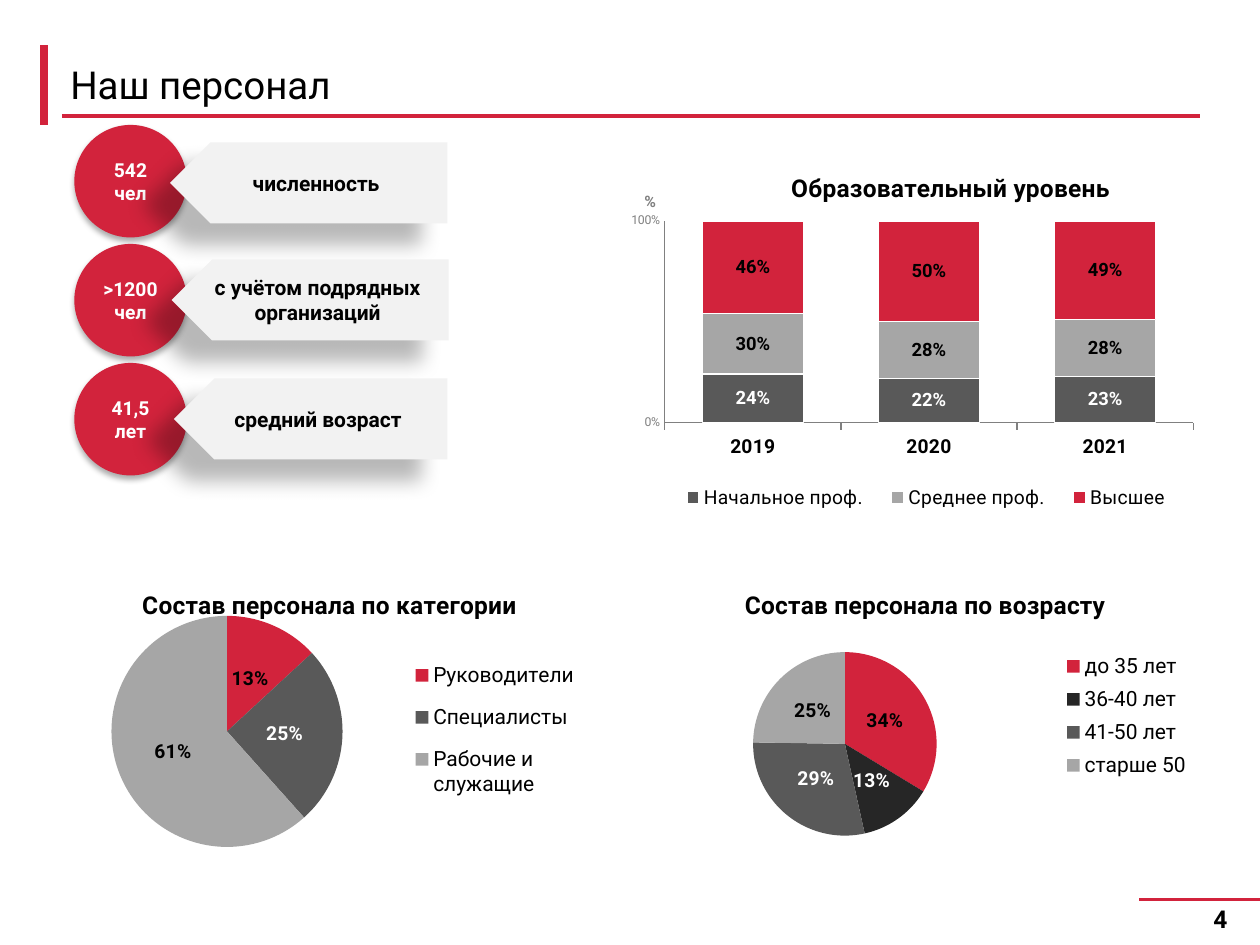
from dataclasses import dataclass

from lxml.etree import SubElement
from pptx import Presentation
from pptx.chart.data import CategoryChartData
from pptx.dml.color import RGBColor
from pptx.enum.chart import XL_CHART_TYPE, XL_LABEL_POSITION, XL_LEGEND_POSITION, XL_TICK_MARK
from pptx.enum.shapes import MSO_CONNECTOR, MSO_SHAPE
from pptx.enum.text import MSO_ANCHOR, PP_ALIGN
from pptx.oxml import parse_xml
from pptx.oxml.ns import nsdecls, qn
from pptx.util import Pt


@dataclass(frozen=True)
class Theme:
    font: str = "Roboto"
    red: str = "D2233C"
    black: str = "000000"
    white: str = "FFFFFF"
    charcoal: str = "262626"
    dark: str = "595959"
    middle: str = "A6A6A6"
    axis: str = "808080"
    pale: str = "F2F2F2"
    heading: float = 22
    chart_title: float = 14
    body: float = 12
    small: float = 11
    bar_label: float = 10.5
    axis_title: float = 9
    tick: float = 7


@dataclass
class SlideBuilder:
    theme: Theme
    slide: object

    def style(self, font, size, color=None, bold=False):
        font.name, font.size, font.bold = self.theme.font, Pt(size), bold
        font.color.rgb = RGBColor.from_string(color or self.theme.black)

    def paint(self, fill, color):
        fill.solid()
        fill.fore_color.rgb = RGBColor.from_string(color)

    def set_text(self, shape, text, size, color=None, bold=False,
                 align=PP_ALIGN.CENTER, insets=(7.2, 3.6, 7.2, 3.6)):
        frame = shape.text_frame
        frame.word_wrap, frame.vertical_anchor = True, MSO_ANCHOR.MIDDLE
        (frame.margin_left, frame.margin_top,
         frame.margin_right, frame.margin_bottom) = map(Pt, insets)
        frame.text = text
        for paragraph in frame.paragraphs:
            paragraph.alignment = align
            for run in paragraph.runs:
                self.style(run.font, size, color, bold)

    def text(self, box, text, size, **options):
        self.set_text(self.slide.shapes.add_textbox(*map(Pt, box)), text, size, **options)

    def line(self, start, end, width):
        connector = self.slide.shapes.add_connector(
            MSO_CONNECTOR.STRAIGHT, *map(Pt, start + end))
        connector.line.color.rgb = RGBColor.from_string(self.theme.red)
        connector.line.width = Pt(width)
        SubElement(connector._element.spPr, qn("a:effectLst"))

    def finish(self, shape, color, alpha, blur, distance, angle):
        """Plain fill, no outline and a soft outer shadow."""
        self.paint(shape.fill, color)
        shape.line.fill.background()
        shape.shadow.inherit = False
        shape._element.spPr.find(qn("a:effectLst")).append(parse_xml(
            f'<a:outerShdw {nsdecls("a")} blurRad="{Pt(blur)}" dist="{Pt(distance)}" '
            f'dir="{angle * 60000}" algn="ctr" rotWithShape="0"><a:srgbClr val="{self.theme.black}">'
            f'<a:alpha val="{alpha * 1000}"/></a:srgbClr></a:outerShdw>'))

    def circle(self, left, top, size, text):
        shape = self.slide.shapes.add_shape(MSO_SHAPE.OVAL, *map(Pt, (left, top, size, size)))
        self.finish(shape, self.theme.red, 32, 3.5, 2.2, 90)
        self.set_text(shape, text, self.theme.small, self.theme.white, True, insets=(2.9,) * 4)

    def arrow(self, left, top, right, text, height=46.2):
        tip, bottom, shoulder = top + height / 2, top + height, left + height / 2
        builder = self.slide.shapes.build_freeform(Pt(right), Pt(bottom))
        corners = [(shoulder, bottom), (left, tip), (shoulder, top), (right, top)]
        builder.add_line_segments([(Pt(x), Pt(y)) for x, y in corners], close=True)
        shape = builder.convert_to_shape()
        self.finish(shape, self.theme.pale, 28, 11.8, 19.7, 141)
        self.set_text(shape, text, self.theme.body, bold=True, insets=(14.4, 13, 5.8, 13))

    def place(self, element, x, y, width=None, height=None, inner=False):
        """Fix a chart part at fractions of the chart area."""
        old = element.find(qn("c:layout"))
        if old is not None:
            element.remove(old)
        layout = parse_xml(f'<c:layout {nsdecls("c")}><c:manualLayout/></c:layout>')
        settings = [("layoutTarget", "inner")] if inner else []
        settings += [("xMode", "edge"), ("yMode", "edge"), ("x", x), ("y", y)]
        if width:
            settings += [("w", width), ("h", height)]
        for name, value in settings:
            SubElement(layout[0], qn(f"c:{name}")).set("val", str(value))
        before = [child for child in element if child.tag in (qn("c:tx"), qn("c:legendPos"))]
        element.insert(len(before), layout)

    def chart(self, kind, box, title, categories, series, title_at, plot_at, legend_at,
              legend_position, legend_size):
        data = CategoryChartData()
        data.categories = categories
        for name, values in series:
            data.add_series(name, values)
        chart = self.slide.shapes.add_chart(kind, *map(Pt, box), data).chart
        self.style(chart.font, 10)
        chart.has_title = True
        chart.chart_title.text_frame.text = title
        run = chart.chart_title.text_frame.paragraphs[0].runs[0]
        self.style(run.font, self.theme.chart_title, bold=True)
        chart.has_legend = True
        chart.legend.position = legend_position
        chart.legend.include_in_layout = False
        self.style(chart.legend.font, legend_size)
        self.place(chart.chart_title._element, *title_at)
        self.place(chart.legend._element, *legend_at)
        self.place(chart._chartSpace.chart.plotArea, *plot_at, inner=True)
        return chart

    def labels(self, labels, number_format, size, color=None):
        labels.show_value = True
        labels.number_format, labels.number_format_is_linked = number_format, False
        labels.position = XL_LABEL_POSITION.CENTER
        self.style(labels.font, size, color, True)

    def pie(self, box, title, slices, title_at, plot_at, legend_at):
        chart = self.chart(
            XL_CHART_TYPE.PIE, box, title, [name for name, *_ in slices],
            [("Персонал", [value for _, value, *_ in slices])], title_at, plot_at, legend_at,
            XL_LEGEND_POSITION.RIGHT, self.theme.body)
        plot = chart.plots[0]
        plot.vary_by_categories = True
        series = plot.series[0]
        self.labels(series.data_labels, '0"%"', self.theme.small)
        for index, (_, _, color, label_color) in enumerate(slices):
            point = series.points[index]
            self.paint(point.format.fill, color)
            if label_color != self.theme.black:
                self.style(point.data_label.font, self.theme.small, label_color, True)
                point.data_label.position = XL_LABEL_POSITION.CENTER
        # Single labels need the number format of the whole series
        for label in series._element.iter(qn("c:dLbl")):
            label.insert(1, parse_xml(
                f'<c:numFmt {nsdecls("c")} formatCode="0&quot;%&quot;" sourceLinked="0"/>'))

    def stacked_columns(self, box, title, categories, layers, title_at, plot_at, legend_at):
        theme = self.theme
        chart = self.chart(
            XL_CHART_TYPE.COLUMN_STACKED, box, title, categories,
            [(name, values) for name, values, *_ in layers], title_at, plot_at, legend_at,
            XL_LEGEND_POSITION.BOTTOM, theme.small)
        plot = chart.plots[0]
        plot.gap_width, plot.overlap, plot.vary_by_categories = 75, 100, False
        for series, (_, _, color, label_color) in zip(plot.series, layers):
            self.paint(series.format.fill, color)
            self.paint(series.format.line.fill, theme.white)
            series.format.line.width = Pt(0.75)
            self.labels(series.data_labels, "0%", theme.bar_label, label_color)
        # Axes
        category, value = chart.category_axis, chart.value_axis
        self.style(category.tick_labels.font, theme.small, bold=True)
        self.style(value.tick_labels.font, theme.tick, theme.axis)
        for axis in (category, value):
            self.paint(axis.format.line.fill, theme.axis)
            axis.has_major_gridlines = False
        category.major_tick_mark = XL_TICK_MARK.OUTSIDE
        value.major_tick_mark = XL_TICK_MARK.NONE
        value.minimum_scale, value.maximum_scale, value.major_unit = 0, 1, 1
        value.tick_labels.number_format = "0%"
        value.tick_labels.number_format_is_linked = False
        frame = value.axis_title.text_frame
        frame.text = "%"
        frame._txBody.bodyPr.set("rot", "0")
        self.style(frame.paragraphs[0].runs[0].font, theme.axis_title, theme.axis, True)
        self.place(value.axis_title._element, 0.02, 0.09)


def main():
    theme = Theme()
    presentation = Presentation()
    presentation.slide_width, presentation.slide_height = Pt(720), Pt(540)
    builder = SlideBuilder(theme, presentation.slides.add_slide(presentation.slide_layouts[6]))

    # Frame, heading and page number
    builder.line((35.3, 66.2), (686, 66.2), 2.25)
    builder.line((25.2, 25.9), (25.2, 71.3), 4.75)
    builder.line((650.9, 514), (720, 514), 1.5)
    builder.text((33.1, 31.7, 653, 32.4), "Наш персонал", theme.heading, align=PP_ALIGN.LEFT)
    builder.text((553.7, 514, 154.8, 22.3), "4", theme.chart_title, bold=True,
                 align=PP_ALIGN.RIGHT)

    # Charts
    builder.stacked_columns(
        (360, 88.6, 331.9, 209.5), "Образовательный уровень", ["2019", "2020", "2021"],
        [("Начальное проф.", (0.24, 0.22, 0.23), theme.dark, theme.white),
         ("Среднее проф.", (0.30, 0.28, 0.28), theme.middle, theme.black),
         ("Высшее", (0.46, 0.50, 0.49), theme.red, theme.black)],
        (0.27, 0.03), (0.06, 0.18, 0.91, 0.55), (0.06, 0.89, 0.9, 0.09))
    builder.pie(
        (36.7, 321.1, 300.2, 177.8), "Состав персонала по категории",
        [("Руководители", 13, theme.red, theme.black),
         ("Специалисты", 25, theme.dark, theme.white),
         ("Рабочие и служащие", 61, theme.middle, theme.black)],
        (0.14, 0.07), (0.09, 0.17, 0.44, 0.75), (0.65, 0.27, 0.34, 0.54))
    builder.pie(
        (360, 321.1, 331.9, 177.8), "Состав персонала по возрасту",
        [("до 35 лет", 34, theme.red, theme.black),
         ("36-40 лет", 13, theme.charcoal, theme.white),
         ("41-50 лет", 29, theme.dark, theme.white),
         ("старше 50", 25, theme.middle, theme.black)],
        (0.19, 0.07), (0.21, 0.29, 0.32, 0.59), (0.73, 0.27, 0.25, 0.45))

    # Headline figures
    figures = [("542\nчел", "численность", 97.2, 81.4, 255.6),
               (">1200\nчел", "с учётом подрядных организаций", 98.1, 148.3, 256.4),
               ("41,5\nлет", "средний возраст", 99.4, 216.3, 255.6)]
    for row, (figure, *_) in enumerate(figures):
        builder.circle(42.5, 71.4 + 68 * row, 64.3, figure)
    for _, caption, left, top, right in figures:
        builder.arrow(left, top, right, caption)

    presentation.save("out.pptx")


if __name__ == "__main__":
    main()
